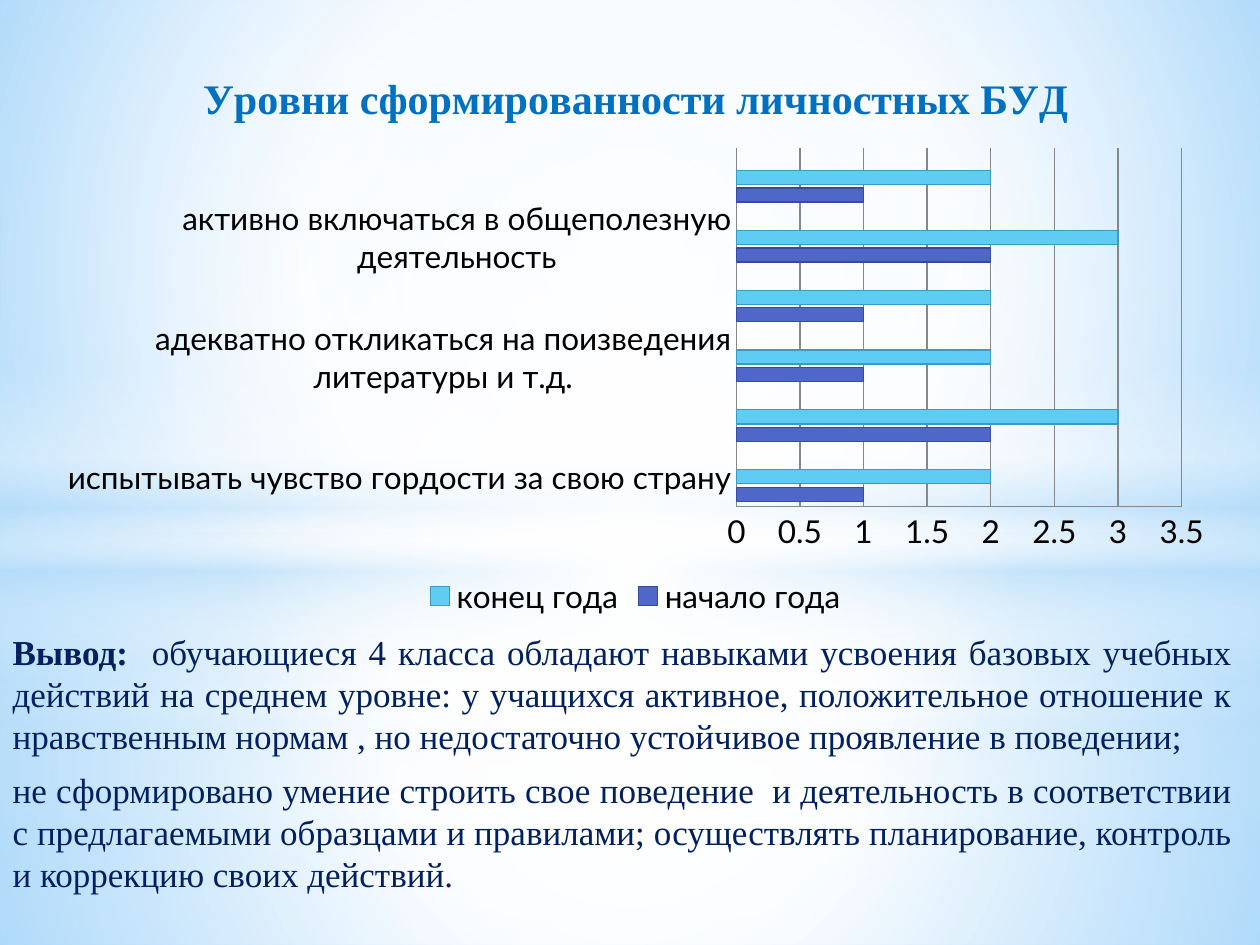
from lxml.etree import SubElement
from pptx import Presentation
from pptx.chart.data import CategoryChartData
from pptx.dml.color import RGBColor
from pptx.enum.chart import XL_CHART_TYPE as CT, XL_LEGEND_POSITION as LP, XL_TICK_MARK as TM
from pptx.enum.shapes import MSO_SHAPE as SH
from pptx.enum.text import MSO_ANCHOR, PP_ALIGN
from pptx.oxml import parse_xml
from pptx.oxml.ns import nsdecls, qn
from pptx.util import Inches, Pt

THEME = {
    "serif": "Times New Roman", "sans": "Lato",
    "title": "0070C0", "body": "002060", "text": "000000", "grid": "878787",
    "title_size": 24, "chart_size": 18, "body_size": 20,
}
TITLE = "Уровни сформированности личностных БУД"
CATEGORIES = [
    "испытывать чувство гордости за свою страну",
    "гордиться школьными успехами",
    "адекватно откликаться на поизведения литературы и т.д.",
    "уважительно и бережно относиться к людям труда",
    "активно включаться в общеполезную деятельность",
    "бережно относиться к культурно-историческому наследию",
]
# name, values, fill, outline
SERIES = [
    ("начало года", [1, 2, 1, 1, 2, 1], "4E67C8", "364BA0"),
    ("конец года", [2, 3, 2, 2, 3, 2], "5ECCF3", "3A9CC0"),
    ("Столбец1", [None] * 6, "A7EA52", "7DB53A"),
]
CONCLUSION = [
    [("Вывод:", True),
     ("  обучающиеся 4 класса обладают навыками усвоения базовых учебных действий на "
      "среднем уровне: у учащихся активное, положительное отношение к нравственным "
      "нормам , но недостаточно устойчивое проявление в поведении;", False)],
    [("не сформировано умение строить свое поведение  и деятельность в соответствии с "
      "предлагаемыми образцами и правилами; осуществлять планирование, контроль и "
      "коррекцию своих действий.", False)],
]

# Gradient stops: position %, colour, opacity %
BACKDROP = [(0, "9ED5FF", 100), (60, "FFFFFF", 100), (100, "5BB9FF", 100)]
BAND = [(0, "FFFFFF", 0), (29, "FFFFFF", 30), (45, "B4DCFA", 40),
        (55, "FFFFFF", 26), (65, "B4DCFA", 60), (100, "FFFFFF", 0)]
CENTRE = (50, 50, 50, 50)


def floor(a, b, c):
    return [(0, "FFFFFF", a), (37, "FFFFFF", b), (100, "B4DCFA", c)]


def sky(a, b, c):
    return [(0, "FFFFFF", a), (48, "FFFFFF", b), (100, "B4DCFA", c)]


def glow(edge):
    return [(0, "FFFFFF", 100), (edge, "FFFFFF", 0)]


# shape, top, height, stops, focus (None for a vertical gradient)
LAYERS = [
    (SH.RECTANGLE, 5.58, 1.92, floor(91, 76, 79), CENTRE),
    (SH.RECTANGLE, 0, 5.58, sky(89, 62, 79), CENTRE),
    (SH.RECTANGLE, 4.12, 2.5, BAND, None),
    (SH.OVAL, 1.75, 5.58, glow(56), CENTRE),
    (SH.RECTANGLE, 4.23, 3.27, floor(92, 77, 80), CENTRE),
    (SH.RECTANGLE, 0, 4.23, sky(90, 63, 80), CENTRE),
    (SH.RECTANGLE, 2.9, 2.5, BAND, None),
    (SH.OVAL, 1.75, 5.58, glow(54), CENTRE),
]


def rgb(key):
    return RGBColor.from_string(THEME.get(key, key))


def set_font(font, face, size, color, bold=False):
    font.name, font.size, font.bold = THEME[face], Pt(THEME[size]), bold
    font.color.rgb = rgb(color)


def set_gradient(fill, root, stops, focus):
    """Swap the solid fill under root for a gradient."""
    fill.solid()
    solid = next(root.iter(qn("a:solidFill")))
    gs = "".join(f'<a:gs pos="{pos * 1000}"><a:srgbClr val="{color}">'
                 f'<a:alpha val="{alpha * 1000}"/></a:srgbClr></a:gs>'
                 for pos, color, alpha in stops)
    if focus:
        sides = " ".join(f'{k}="{v * 1000}"' for k, v in zip("ltrb", focus))
        way = f'<a:path path="circle"><a:fillToRect {sides}/></a:path>'
    else:
        way = '<a:lin ang="5400000" scaled="0"/>'
    solid.getparent().replace(solid, parse_xml(
        f'<a:gradFill {nsdecls("a")} rotWithShape="1"><a:gsLst>{gs}</a:gsLst>{way}</a:gradFill>'))


prs = Presentation()
prs.slide_width, prs.slide_height = Inches(10), Inches(7.5)
s = prs.slides.add_slide(prs.slide_layouts[1])
title, body = s.placeholders
title.element.getparent().remove(title.element)

# Background and its soft light layers
set_gradient(s.background.fill, s.element, BACKDROP, (20, 10, 20, 60))
for kind, top, height, stops, focus in LAYERS:
    sp = s.shapes.add_shape(kind, 0, Inches(top), prs.slide_width, Inches(height))
    sp.shadow.inherit = False
    sp.line.fill.background()
    set_gradient(sp.fill, sp.element.spPr, stops, focus)

# Conclusion, brought in front of the layers
s.shapes.element.append(body.element)
body.left, body.top, body.width, body.height = map(Inches, (0, 4.95, 9.88, 2.34))
tf = body.text_frame
tf.word_wrap, tf.vertical_anchor = True, MSO_ANCHOR.TOP
for i, parts in enumerate(CONCLUSION):
    p = tf.paragraphs[0] if i == 0 else tf.add_paragraph()
    pPr = p._p.get_or_add_pPr()
    pPr.set("marL", "0")
    pPr.set("indent", "0")
    SubElement(pPr, qn("a:buNone"))
    p.alignment = PP_ALIGN.JUSTIFY
    p.space_before, p.space_after = Pt(4 if i else 0), Pt(3)
    for text, bold in parts:
        r = p.add_run()
        r.text = text
        set_font(r.font, "serif", "body_size", "body", bold)

# Chart
data = CategoryChartData()
data.categories = CATEGORIES
for name, values, *_ in SERIES:
    data.add_series(name, values)
chart = s.shapes.add_chart(CT.BAR_CLUSTERED, *map(Inches, (0.35, 0.36, 9.39, 4.57)), data).chart
set_font(chart.font, "sans", "chart_size", "text")
chart.has_title = True
chart.chart_title.include_in_layout = False
tf = chart.chart_title.text_frame
tf.text = TITLE
set_font(tf.paragraphs[0].runs[0].font, "serif", "title_size", "title", True)

plot = chart.plots[0]
plot.gap_width, plot.overlap, plot.vary_by_categories = 75, -25, False
for ser, (_, _, color, outline) in zip(plot.series, SERIES):
    ser.format.fill.solid()
    ser.format.fill.fore_color.rgb = rgb(color)
    ser.format.line.color.rgb = rgb(outline)
    ser.format.line.width = Pt(0.75)

cat, val = chart.category_axis, chart.value_axis
for axis in (cat, val):
    axis.major_tick_mark = axis.minor_tick_mark = TM.NONE
    axis.format.line.color.rgb = rgb("grid")
val.has_major_gridlines = True
val.major_gridlines.format.line.color.rgb = rgb("grid")

# Legend without the empty series
chart.has_legend = True
legend = chart.legend
legend.position, legend.include_in_layout = LP.BOTTOM, False
legend._element.find(qn("c:legendPos")).addnext(parse_xml(
    f'<c:legendEntry {nsdecls("c")}><c:idx val="0"/><c:delete val="1"/></c:legendEntry>'))

prs.save("out.pptx")
